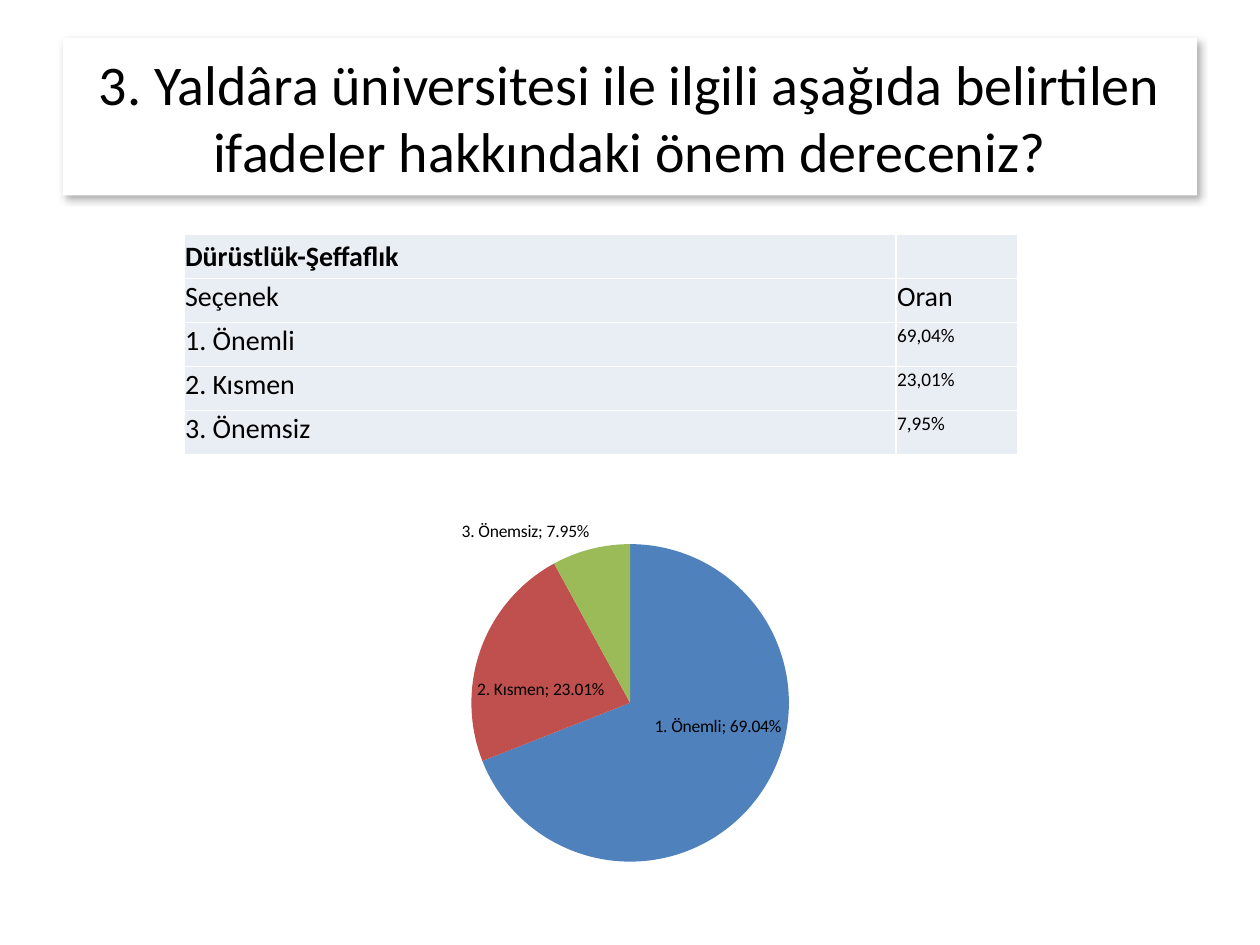
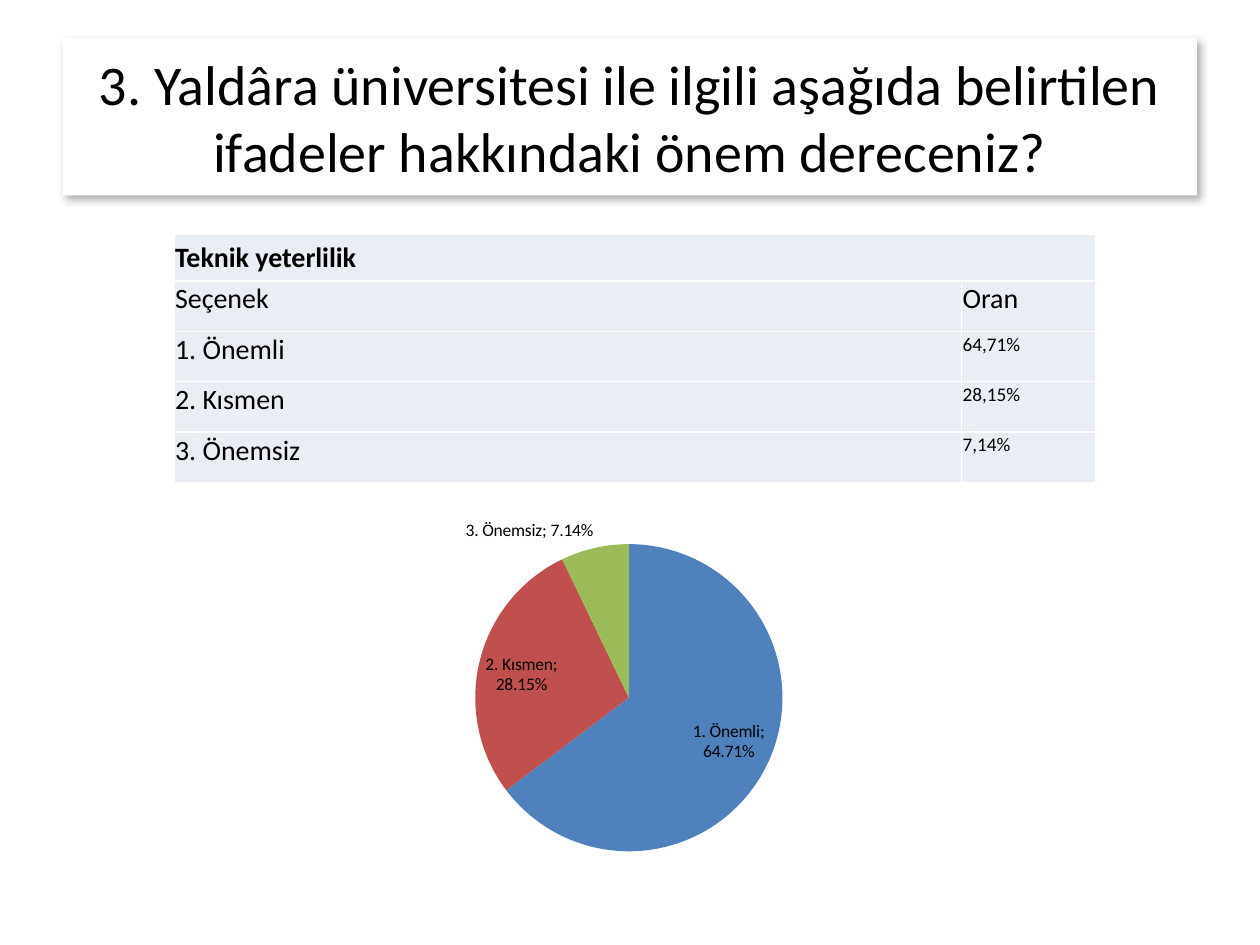
from dataclasses import dataclass

from pptx import Presentation
from pptx.chart.data import CategoryChartData as ChartData
from pptx.dml.color import RGBColor as RGB
from pptx.enum.chart import XL_CHART_TYPE as Kind, XL_LABEL_POSITION as Spot
from pptx.enum.shapes import MSO_SHAPE as Shape
from pptx.enum.text import MSO_ANCHOR as Anchor, PP_ALIGN as Align
from pptx.oxml import parse_xml
from pptx.oxml.ns import nsdecls
from pptx.util import Inches, Pt

COLORS = {
    "text": "000000",
    "panel": "FFFFFF",
    "cell": "E9EDF4",
}
SLICES = ["4F81BD", "C0504D", "9BBB59"]
FONT = "Calibri"
TITLE = ("3. Yaldâra üniversitesi ile ilgili aşağıda belirtilen "
         "ifadeler hakkındaki önem dereceniz?")
CHOICES = ["1. Önemli", "2. Kısmen", "3. Önemsiz"]


@dataclass
class Box:
    left: float
    top: float
    width: float
    height: float

    def emu(self) -> list:
        return [Inches(v) for v in (self.left, self.top, self.width, self.height)]


@dataclass
class Survey:
    topic: str
    rates: list[float]
    grid: Box
    cols: list[float]
    head: float
    row: float
    merged: bool
    chart: Box
    pie: Box


SURVEYS = [
    Survey("Dürüstlük-Şeffaflık", [0.6904, 0.2301, 0.0795],
           Box(1.46, 1.86, 6.61, 1.77), [5.65, 0.97], 0.35, 0.35, False,
           Box(1.77, 3.99, 6.38, 2.99), Box(3.74, 4.32, 2.52, 2.52)),
    Survey("Teknik yeterlilik", [0.6471, 0.2815, 0.0714],
           Box(1.38, 1.86, 7.32, 1.97), [6.25, 1.07], 0.37, 0.4, True,
           Box(1.61, 3.99, 6.69, 2.91), Box(3.77, 4.32, 2.44, 2.44)),
]


def style(font, size: float, bold: bool = False) -> None:
    font.name, font.size, font.bold = FONT, Pt(size), bold
    font.color.rgb = RGB.from_string(COLORS["text"])


def paint(fill, color: str) -> None:
    fill.solid()
    fill.fore_color.rgb = RGB.from_string(color)


def add_title(slide) -> None:
    panel = slide.shapes.add_shape(Shape.RECTANGLE, *Box(0.5, 0.3, 9, 1.25).emu())
    paint(panel.fill, COLORS["panel"])
    panel.line.fill.background()
    panel._element.spPr.append(parse_xml(
        f'<a:effectLst {nsdecls("a")}><a:outerShdw blurRad="{Pt(4.5)}" '
        f'dist="{Pt(2.6)}" dir="{53 * 60000}" algn="tl" rotWithShape="0">'
        f'<a:srgbClr val="{COLORS["text"]}"><a:alpha val="30000"/></a:srgbClr>'
        '</a:outerShdw></a:effectLst>'))
    frame = panel.text_frame
    frame.text = TITLE
    frame.word_wrap = True
    frame.vertical_anchor = Anchor.MIDDLE
    para = frame.paragraphs[0]
    para.alignment = Align.CENTER
    style(para.runs[0].font, 32)


def fill_cell(cell, text: str, size: float, bold: bool) -> None:
    paint(cell.fill, COLORS["cell"])
    cell.margin_left = cell.margin_right = cell.margin_top = Inches(0.01)
    cell.margin_bottom = 0
    cell.vertical_anchor = Anchor.MIDDLE if bold else Anchor.TOP
    cell.text_frame.text = text
    for run in cell.text_frame.paragraphs[0].runs:
        style(run.font, size, bold)


def add_rates(slide, survey: Survey) -> None:
    rates = [f"{rate:.2%}".replace(".", ",") for rate in survey.rates]
    rows = [(survey.topic, ""), ("Seçenek", "Oran"), *zip(CHOICES, rates)]
    table = slide.shapes.add_table(len(rows), 2, *survey.grid.emu()).table
    table.first_row = table.horz_banding = False
    for col, width in zip(table.columns, survey.cols):
        col.width = Inches(width)
    for r, texts in enumerate(rows):
        table.rows[r].height = Inches(survey.row if r else survey.head)
        for c, text in enumerate(texts):
            size = 11 if c == 1 and r > 1 else 16
            fill_cell(table.cell(r, c), text, size, r == 0)
    if survey.merged:
        table.cell(0, 0).merge(table.cell(0, 1))


def place_pie(chart, area: Box, pie: Box) -> None:
    """Fix the plot inside the chart, as fractions of the chart area."""
    parts = {
        "x": (pie.left - area.left) / area.width,
        "y": (pie.top - area.top) / area.height,
        "w": pie.width / area.width,
        "h": pie.height / area.height,
    }
    modes = "".join(f'<c:{k}Mode val="edge"/>' for k in "xy")
    sizes = "".join(f'<c:{k} val="{v:.3f}"/>' for k, v in parts.items())
    plot = chart._chartSpace.chart.plotArea
    for old in plot.findall(plot.tag.replace("plotArea", "layout")):
        plot.remove(old)
    plot.insert(0, parse_xml(
        f'<c:layout {nsdecls("c")}><c:manualLayout><c:layoutTarget val="inner"/>'
        f'{modes}{sizes}</c:manualLayout></c:layout>'))


def add_pie(slide, survey: Survey) -> None:
    data = ChartData(number_format="0.00%")
    data.categories = CHOICES
    data.add_series("Series 1", survey.rates)
    chart = slide.shapes.add_chart(Kind.PIE, *survey.chart.emu(), data).chart
    chart.has_legend = chart.has_title = False
    style(chart.font, 10)
    plot = chart.plots[0]
    plot.vary_by_categories = True
    for i, color in enumerate(SLICES):
        paint(plot.series[0].points[i].format.fill, color)
    plot.has_data_labels = True
    labels = plot.data_labels
    labels.show_category_name = labels.show_value = True
    labels.show_percentage = False
    labels.number_format, labels.number_format_is_linked = "0.00%", False
    labels.position = Spot.BEST_FIT
    style(labels.font, 10)
    bubble = labels._element.find(f"{{{labels._element.nsmap['c']}}}showBubbleSize")
    bubble.addnext(parse_xml(f'<c:separator {nsdecls("c")}>; </c:separator>'))
    place_pie(chart, survey.chart, survey.pie)


def main() -> None:
    deck = Presentation()
    deck.slide_width, deck.slide_height = Inches(10), Inches(7.5)
    for survey in SURVEYS:
        slide = deck.slides.add_slide(deck.slide_layouts[6])
        add_title(slide)
        add_rates(slide, survey)
        add_pie(slide, survey)
    deck.save("out.pptx")


if __name__ == "__main__":
    main()
